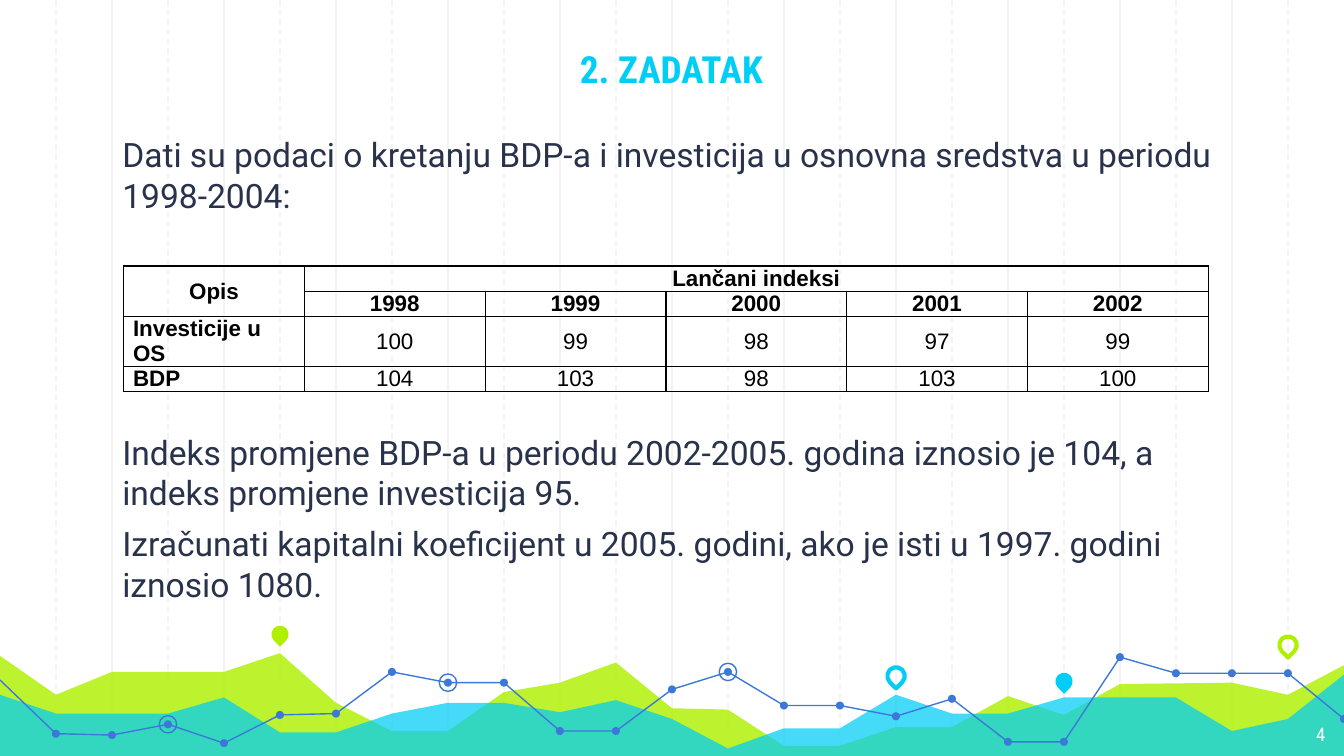
from pptx import Presentation
from pptx.dml.color import RGBColor
from pptx.enum.dml import MSO_LINE
from pptx.enum.shapes import MSO_CONNECTOR, MSO_SHAPE
from pptx.enum.text import MSO_ANCHOR, MSO_AUTO_SIZE, PP_ALIGN
from pptx.oxml.ns import qn
from pptx.util import Inches, Pt
from lxml.etree import SubElement

LIME, CYAN, BLUE = "AFF000", "00CEF6", "3C78D8"
GRID, INK, BLACK, WHITE = "F3F3F3", "28324A", "000000", "FFFFFF"
COLUMNS = 24

# Heights below the top of the chart band, keyed by grid column
LIME_AREA = {0: 0.38, 1: 0.67, 2: 0.5, 4: 0.5, 5: 0.36, 6: 0.73, 7: 0.94, 8: 0.94,
             9: 0.65, 10: 0.58, 11: 0.43, 12: 0.77, 13: 0.78, 14: 1.05, 15: 1.05,
             16: 0.91, 17: 0.91, 18: 0.68, 19: 0.82, 20: 0.59, 22: 0.58, 23: 0.67, 24: 0.45}
CYAN_AREA = {0: 0.67, 1: 0.81, 3: 0.81, 4: 0.69, 5: 0.95, 6: 0.95, 7: 0.81, 8: 0.73,
             9: 0.73, 10: 0.8, 11: 0.71, 12: 0.85, 13: 1.07, 14: 0.92, 15: 0.92,
             16: 0.67, 17: 0.81, 18: 0.81, 19: 0.69, 21: 0.69, 22: 0.94, 23: 0.85, 24: 0.52}
TREND = [0.56, 0.96, 0.97, 0.89, 1.03, 0.82, 0.81, 0.5, 0.58, 0.58, 0.94, 0.94, 0.63,
         0.5, 0.75, 0.75, 0.83, 0.7, 1.02, 1.02, 0.39, 0.51, 0.51, 0.51, 0.85]
TREND_PARTS = [(0, 11), (11, 20), (20, 24)]
RINGED = [3, 8, 13]
PINS = [(5, 0.22, LIME, True), (16, 0.53, CYAN, False),
        (19, 0.57, CYAN, True), (23, 0.3, LIME, False)]

ROWS = [["Opis", "Lančani indeksi", "", "", "", ""],
        ["", "1998", "1999", "2000", "2001", "2002"],
        ["Investicije u OS", "100", "99", "98", "97", "99"],
        ["BDP", "104", "103", "98", "103", "100"]]
ROW_HEIGHTS = [0.18, 0.18, 0.34, 0.18]


def rgb(color):
    return RGBColor.from_string(color)


def paint(shape, fill=None, line=None, width=0.75, opacity=None):
    shape.shadow.inherit = False
    if fill:
        shape.fill.solid()
        shape.fill.fore_color.rgb = rgb(fill)
        if opacity:
            tint = shape.element.spPr.find(qn("a:solidFill"))[0]
            SubElement(tint, qn("a:alpha"), val=str(opacity * 1000))
    else:
        shape.fill.background()
    if line:
        shape.line.color.rgb = rgb(line)
        shape.line.width = Pt(width)
    else:
        shape.line.fill.background()


def style(para, size, font, color, bold=False, align=PP_ALIGN.LEFT):
    para.alignment = align
    para.font.size, para.font.name, para.font.bold = Pt(size), font, bold
    para.font.color.rgb = rgb(color)


def place(shape, box):
    shape.left, shape.top, shape.width, shape.height = map(Inches, box)


def set_frame(frame, anchor):
    frame.word_wrap, frame.auto_size = True, MSO_AUTO_SIZE.NONE
    frame.vertical_anchor = anchor
    frame.margin_left = frame.margin_right = Inches(0.1)
    frame.margin_top = frame.margin_bottom = Inches(0.1)


def add_path(page, points, close):
    points = [(Inches(x), Inches(y)) for x, y in points]
    builder = page.shapes.build_freeform(*points[0])
    builder.add_line_segments(points[1:], close=close)
    return builder.convert_to_shape()


def add_round(page, kind, x, y, size):
    return page.shapes.add_shape(kind, Inches(x - size / 2), Inches(y - size / 2),
                                 Inches(size), Inches(size))


def add_grid(page, box):
    left, top, width, height = box
    # Solid rules on even columns, dashed ones on odd columns
    for column in [*range(2, COLUMNS, 2), *range(1, COLUMNS, 2)]:
        x = Inches(left + column * width / COLUMNS)
        rule = page.shapes.add_connector(MSO_CONNECTOR.STRAIGHT, x, Inches(top),
                                         x, Inches(top + height))
        rule.line.color.rgb = rgb(GRID)
        rule.line.width = Pt(0.75)
        if column % 2:
            rule.line.dash_style = MSO_LINE.DASH
        SubElement(rule.element.spPr, qn("a:effectLst"))


def add_chart_band(page, box):
    left, top, width, height = box

    def spot(column, depth):
        return left + column * width / COLUMNS, top + depth

    # Filled areas
    for area, color, opacity in [(LIME_AREA, LIME, 82), (CYAN_AREA, CYAN, 73)]:
        points = [spot(*item) for item in area.items()]
        points += [spot(COLUMNS, height), spot(0, height)]
        paint(add_path(page, points, True), fill=color, opacity=opacity)

    # Trend line with dots and rings
    trend = [spot(*item) for item in enumerate(TREND)]
    for first, last in TREND_PARTS:
        paint(add_path(page, trend[first:last + 1], False), line=BLUE)
    for x, y in trend[1:]:
        paint(add_round(page, MSO_SHAPE.OVAL, x, y, 0.06), fill=BLUE)
    for column in RINGED:
        paint(add_round(page, MSO_SHAPE.OVAL, *trend[column], 0.13), line=BLUE)

    # Pins
    for column, depth, color, solid in PINS:
        pin = add_round(page, MSO_SHAPE.TEAR, *spot(column, depth), 0.13)
        pin.rotation = 135
        if solid:
            paint(pin, fill=color)
        else:
            paint(pin, line=color, width=2.25)


def add_title(page, box, text):
    title = page.shapes.title
    page.shapes.element.append(title.element)  # in front of the decoration
    place(title, box)
    set_frame(title.text_frame, MSO_ANCHOR.BOTTOM)
    title.text_frame.text = text
    style(title.text_frame.paragraphs[0], 20, "Roboto Condensed", CYAN, True, PP_ALIGN.CENTER)


def add_body(page, box, items):
    body = page.placeholders[1]
    page.shapes.element.append(body.element)
    place(body, box)
    frame = body.text_frame
    set_frame(frame, MSO_ANCHOR.TOP)
    frame.text = "\n".join(text for text, _ in items)
    for para, (_, space) in zip(frame.paragraphs, items):
        props = para._p.get_or_add_pPr()
        props.set("marL", str(Inches(0.13)))
        props.set("indent", "0")
        SubElement(props, qn("a:buNone"))
        para.space_before = Pt(space)
        style(para, 18, "Roboto", INK)


def add_border(cell):
    props = cell._tc.get_or_add_tcPr()
    for index, side in enumerate(("lnL", "lnR", "lnT", "lnB")):
        edge = props.makeelement(qn(f"a:{side}"), {"w": str(Pt(0.75))})
        fill = SubElement(edge, qn("a:solidFill"))
        SubElement(fill, qn("a:srgbClr"), val=BLACK)
        props.insert(index, edge)


def add_index_table(page, box):
    table = page.shapes.add_table(len(ROWS), len(ROWS[0]), *map(Inches, box)).table
    table.first_row = table.horz_banding = False
    for column in table.columns:
        column.width = Inches(box[2] / len(ROWS[0]))
    for r, (row, height) in enumerate(zip(ROWS, ROW_HEIGHTS)):
        table.rows[r].height = Inches(height)
        for c, text in enumerate(row):
            cell = table.cell(r, c)
            cell.margin_left = cell.margin_right = Inches(0.07)
            cell.margin_top = cell.margin_bottom = 0
            header = r < 2
            cell.vertical_anchor = MSO_ANCHOR.TOP if header and c else MSO_ANCHOR.MIDDLE
            cell.text = text
            align = PP_ALIGN.CENTER if header or c else PP_ALIGN.LEFT
            style(cell.text_frame.paragraphs[0], 12, "Arial", BLACK, header or c == 0, align)
            cell.fill.background()
            add_border(cell)
    table.cell(0, 0).merge(table.cell(1, 0))
    table.cell(0, 1).merge(table.cell(0, 5))


def add_page_number(page, box, number):
    label = page.shapes.add_textbox(*map(Inches, box))
    set_frame(label.text_frame, MSO_ANCHOR.TOP)
    label.text_frame.text = number
    style(label.text_frame.paragraphs[0], 10, "Roboto Condensed", WHITE, align=PP_ALIGN.RIGHT)


def main():
    deck = Presentation()
    deck.slide_width = Inches(10)
    deck.slide_height = deck.slide_width * 9 // 16
    page = deck.slides.add_slide(deck.slide_layouts[1])
    add_grid(page, (0, 0, 10, 5.65))
    add_chart_band(page, (0, 4.5, 10, 1.15))
    add_page_number(page, (9.36, 5.28, 0.6, 0.35), "4")
    # The second paragraph's space leaves room for the table
    add_body(page, (0.68, 0.9, 8.62, 3.83), [
        ("Dati su podaci o kretanju BDP-a i investicija u osnovna sredstva "
         "u periodu 1998-2004:", 0),
        ("Indeks promjene BDP-a u periodu 2002-2005. godina iznosio je 104, "
         "a indeks promjene investicija 95.", 116),
        ("Izračunati kapitalni koeficijent u 2005. godini, ako je isti u 1997. "
         "godini iznosio 1080.", 6)])
    add_title(page, (1.17, 0, 7.65, 0.78), "2. ZADATAK")
    add_index_table(page, (0.92, 1.98, 8.07, sum(ROW_HEIGHTS)))
    deck.save("out.pptx")


if __name__ == "__main__":
    main()
